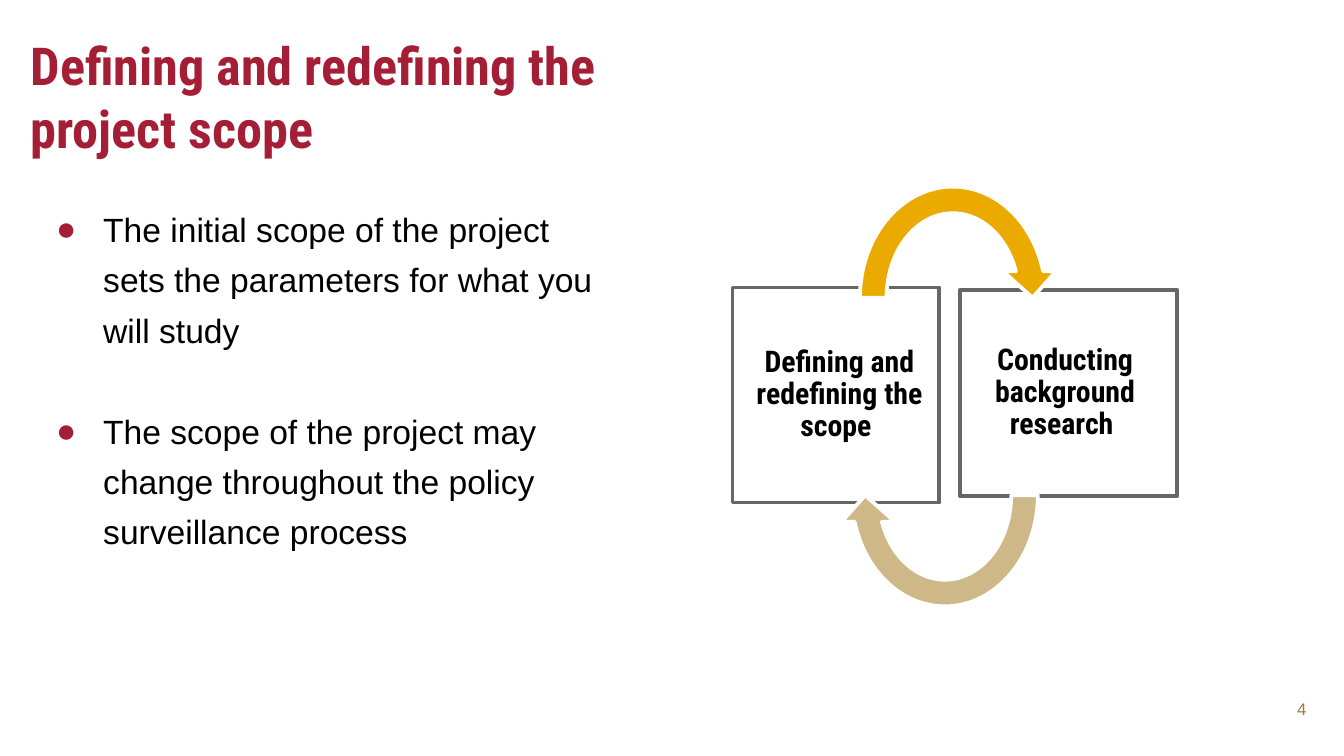
from lxml import etree
from pptx import Presentation
from pptx.dml.color import RGBColor
from pptx.enum.shapes import MSO_SHAPE
from pptx.enum.text import MSO_ANCHOR, PP_ALIGN
from pptx.oxml.ns import qn
from pptx.util import Inches, Pt

COLORS = {
    "cherry": "A41E35",
    "black": "000000",
    "bronze": "9A7E40",
    "gray": "666666",
    "gold": "EAAA00",
    "tan": "CEB888",
    "white": "FFFFFF",
}


def rgb(name):
    return RGBColor.from_string(COLORS[name])


def write(shape, paragraphs, font, size, color, bold=False, align=PP_ALIGN.LEFT,
          anchor=MSO_ANCHOR.TOP, side_insets=(0.1, 0.1)):
    """Fill a shape with uniformly formatted paragraphs and return its text frame."""
    frame = shape.text_frame
    frame.word_wrap = True
    frame.vertical_anchor = anchor
    frame.margin_left, frame.margin_right = [Inches(inset) for inset in side_insets]
    frame.margin_top = frame.margin_bottom = Inches(0.1)
    frame.text = "\n".join(paragraphs)
    for paragraph in frame.paragraphs:
        paragraph.alignment = align
        for run in paragraph.runs:
            run.font.name = font
            run.font.size = Pt(size)
            run.font.bold = bold
            run.font.color.rgb = rgb(color)
    return frame


prs = Presentation()
prs.slide_width = Inches(10)
prs.slide_height = Inches(10) * 9 // 16
slide = prs.slides.add_slide(prs.slide_layouts[6])
shapes = slide.shapes

page_number = shapes.add_textbox(Inches(9.38), Inches(5.09), Inches(0.44), Inches(0.37))
write(page_number, ["4"], "Arial", 9, "bronze", align=PP_ALIGN.RIGHT,
      anchor=MSO_ANCHOR.MIDDLE)

title = shapes.add_textbox(Inches(0.13), Inches(0.15), Inches(9.16), Inches(0.63))
write(title, ["Defining and redefining the \vproject scope"],
      "Roboto Condensed", 28, "cherry", bold=True)

# Bulleted points, one empty line's height apart
points = shapes.add_textbox(Inches(0.17), Inches(1.38), Inches(4.37), Inches(4.02))
points_frame = write(points, [
    "The initial scope of the project sets the parameters for what you will study",
    "The scope of the project may change throughout the policy surveillance process",
], "Arial", 18, "black")
for paragraph in points_frame.paragraphs:
    paragraph.line_spacing = 1.25
    properties = paragraph._p.get_or_add_pPr()
    properties.set("marL", str(Inches(0.5)))
    properties.set("indent", str(Inches(-0.35)))
    bullet_color = etree.SubElement(properties, qn("a:buClr"))
    etree.SubElement(bullet_color, qn("a:srgbClr"), val=COLORS["cherry"])
    etree.SubElement(properties, qn("a:buFont"), typeface="Arial")
    etree.SubElement(properties, qn("a:buChar"), char="●")
points_frame.paragraphs[1].space_before = Pt(27)

# The two steps of the cycle
steps = [
    ("Defining and redefining the scope ", 5.45, 2.14, 1.54, 1.6, (0.15, 0.1)),
    ("Conducting background research ", 7.14, 2.16, 1.62, 1.53, (0.1, 0.15)),
]
for label, left, top, width, height, side_insets in steps:
    step = shapes.add_shape(MSO_SHAPE.RECTANGLE, Inches(left), Inches(top),
                            Inches(width), Inches(height))
    step.shadow.inherit = False
    step.fill.background()
    step.line.color.rgb = rgb("gray")
    step.line.width = Pt(2)
    label_frame = write(step, [label], "Roboto Condensed", 16, "black", bold=True,
                        align=PP_ALIGN.CENTER, anchor=MSO_ANCHOR.MIDDLE,
                        side_insets=side_insets)
    label_frame.paragraphs[0].line_spacing = 0.9

# Arrows leading from each step to the other
for left, top, rotation, color in [(6.3, 1.29, 0, "gold"), (6.24, 2.76, 180, "tan")]:
    arrow = shapes.add_shape(MSO_SHAPE.CIRCULAR_ARROW, Inches(left), Inches(top),
                             Inches(1.58), Inches(1.85))
    arrow.shadow.inherit = False
    arrow.rotation = rotation
    for index, value in enumerate([0.125, 11.42, 204.58, 108, 0.125]):
        arrow.adjustments[index] = value
    arrow.fill.solid()
    arrow.fill.fore_color.rgb = rgb(color)
    arrow.line.color.rgb = rgb("white")
    arrow.line.width = Pt(2)

prs.save("out.pptx")
